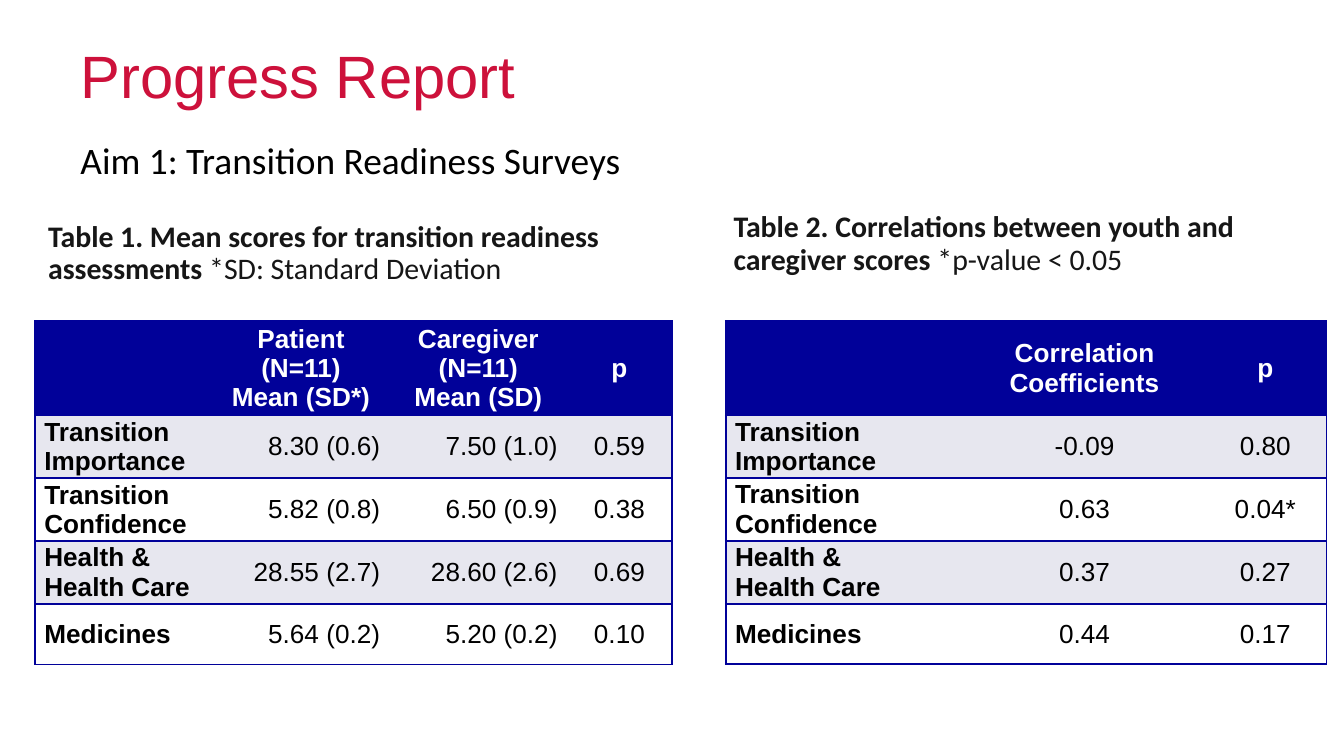
from lxml import etree
from pptx import Presentation
from pptx.dml.color import RGBColor
from pptx.enum.text import MSO_ANCHOR, PP_ALIGN
from pptx.oxml.ns import qn
from pptx.util import Inches, Pt

LEFT, CENTER, RIGHT = PP_ALIGN.LEFT, PP_ALIGN.CENTER, PP_ALIGN.RIGHT
MIDDLE = MSO_ANCHOR.MIDDLE
NAVY, BAND, WHITE, BLACK, RED, INK = "010199", "E7E7EF", "FFFFFF", "000000", "CD113B", "161616"
NO_STYLE = "{2D5ABB26-0587-4C30-8999-92F81FD0307C}"
WIDTH = 10
HEIGHT = WIDTH * 9 / 16
TABLE_TOP, ROW_HEIGHTS = 2.39, (0.7, 0.46, 0.46, 0.46, 0.45)

HEADINGS = [
    ("Progress Report", (0.5, 0.24, 9, 0.59), {"size": 32, "font": "Arial", "color": RED}),
    ("Aim 1: Transition Readiness Surveys", (0.5, 0.97, 9, 0.4), {"size": 20, "color": BLACK}),
]
CAPTIONS = [
    ("Table 1. Mean scores for transition readiness assessments ", "*SD: Standard Deviation",
     (0.26, 1.6, 4.84, 0.45)),
    ("Table 2. Correlations between youth and caregiver scores ", "*p-value < 0.05",
     (5.36, 1.53, 4.73, 0.59)),
]
TABLES = [
    {"left": 0.26, "columns": (1.32, 1.32, 1.32, 0.78), "aligns": (LEFT, RIGHT, RIGHT, CENTER), "rows": [
        ("", "Patient (N=11)\nMean (SD*)", "Caregiver (N=11)\nMean (SD)", "p"),
        ("Transition Importance", "8.30 (0.6)", "7.50 (1.0)", "0.59"),
        ("Transition Confidence", "5.82 (0.8)", "6.50 (0.9)", "0.38"),
        ("Health & Health Care", "28.55 (2.7)", "28.60 (2.6)", "0.69"),
        ("Medicines", "5.64 (0.2)", "5.20 (0.2)", "0.10")]},
    {"left": 5.4, "columns": (1.78, 1.78, 0.91), "aligns": (LEFT, CENTER, CENTER), "rows": [
        ("", "Correlation Coefficients", "p"),
        ("Transition Importance", "-0.09", "0.80"),
        ("Transition Confidence", "0.63", "0.04*"),
        ("Health &\nHealth Care", "0.37", "0.27"),
        ("Medicines", "0.44", "0.17")]},
]


def rgb(color):
    """Turn a hex string into a colour."""
    return RGBColor.from_string(color)


def add_span(para, text, size=16, font="Calibri", color=INK, bold=False):
    """Add formatted text to a paragraph."""
    span = para.add_run()
    span.text = text
    span.font.size, span.font.name, span.font.bold = Pt(size), font, bold
    span.font.color.rgb = rgb(color)


def add_box(page, area, spans, spacing=1.0):
    """Add a wrapped one-paragraph text box made of (text, format) spans."""
    frame = page.shapes.add_textbox(*map(Inches, area)).text_frame
    frame.word_wrap = True
    para = frame.paragraphs[0]
    para.line_spacing = spacing
    for text, style in spans:
        add_span(para, text, **style)


def add_border(cell, side):
    """Draw a one-point navy line on one side of a cell."""
    line = etree.SubElement(cell._tc.get_or_add_tcPr(), qn(f"a:ln{side}"), w=str(Pt(1)))
    fill = etree.SubElement(line, qn("a:solidFill"))
    etree.SubElement(fill, qn("a:srgbClr"), val=NAVY)


def fill_cell(cell, text, fill, sides, align, color, bold):
    """Set the text, borders and fill of a table cell."""
    cell.margin_left = cell.margin_right = Inches(0.07)
    cell.margin_top = cell.margin_bottom = 0
    cell.vertical_anchor = MIDDLE
    for side in sides:
        add_border(cell, side)
    cell.fill.solid()
    cell.fill.fore_color.rgb = rgb(fill)
    for index, line in enumerate(text.split("\n") if text else []):
        para = cell.text_frame.add_paragraph() if index else cell.text_frame.paragraphs[0]
        para.alignment = align
        add_span(para, line, size=14, font="Arial", color=color, bold=bold)


def add_data_table(page, left, columns, aligns, rows):
    """Add a table with a navy header and banded rows."""
    frame = page.shapes.add_table(len(rows), len(columns), Inches(left), Inches(TABLE_TOP),
                                  Inches(sum(columns)), Inches(sum(ROW_HEIGHTS)))
    table = frame.table
    table.first_row = table.horz_banding = False
    next(frame._element.iter(qn("a:tableStyleId"))).text = NO_STYLE
    for column, width in zip(table.columns, columns):
        column.width = Inches(width)
    last = len(columns) - 1
    for r, texts in enumerate(rows):
        table.rows[r].height = Inches(ROW_HEIGHTS[r])
        header = r == 0
        fill = NAVY if header else BAND if r % 2 else WHITE
        for c, text in enumerate(texts):
            sides = ("L" if c == 0 else "") + ("R" if c == last else "") + "TB"
            fill_cell(table.cell(r, c), text, fill, sides, CENTER if header else aligns[c],
                      WHITE if header else BLACK, header or c == 0)


def main():
    """Build the slide and save it."""
    deck = Presentation()
    deck.slide_width, deck.slide_height = Inches(WIDTH), Inches(HEIGHT)
    page = deck.slides.add_slide(deck.slide_layouts[6])
    for text, area, style in HEADINGS:
        add_box(page, area, [(text, style)])
    for title, note, area in CAPTIONS:
        add_box(page, area, [(title, {"bold": True}), (note, {})], spacing=0.9)
    for table in TABLES:
        add_data_table(page, **table)
    deck.save("out.pptx")


if __name__ == "__main__":
    main()
